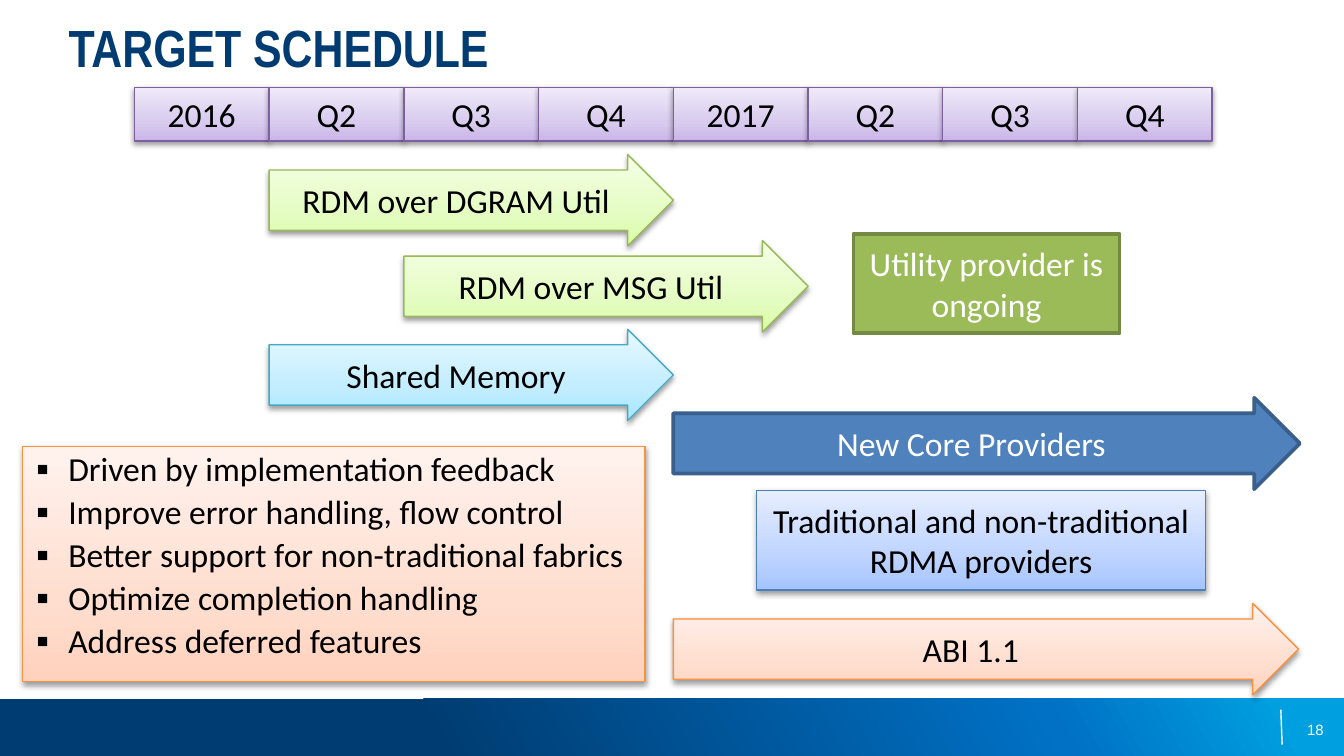
from lxml import etree
from pptx import Presentation
from pptx.dml.color import RGBColor
from pptx.enum.shapes import MSO_CONNECTOR, MSO_SHAPE
from pptx.enum.text import MSO_ANCHOR, PP_ALIGN
from pptx.oxml.ns import qn
from pptx.util import Inches, Pt

RECTANGLE = MSO_SHAPE.RECTANGLE
ARROW = MSO_SHAPE.RIGHT_ARROW
STRAIGHT = MSO_CONNECTOR.STRAIGHT
LEFT, CENTER, RIGHT = PP_ALIGN.LEFT, PP_ALIGN.CENTER, PP_ALIGN.RIGHT
TOP, MIDDLE = MSO_ANCHOR.TOP, MSO_ANCHOR.MIDDLE

WHITE = RGBColor(0xFF, 0xFF, 0xFF)
BLACK = RGBColor(0x00, 0x00, 0x00)
NAVY = RGBColor(0x00, 0x3C, 0x71)
BLUE = RGBColor(0x00, 0x71, 0xC5)
SKY = RGBColor(0x00, 0x9F, 0xDF)
CORE_FILL, CORE_LINE = RGBColor(0x4F, 0x81, 0xBD), RGBColor(0x3A, 0x5F, 0x8C)
UTILITY_FILL, UTILITY_LINE = RGBColor(0x9B, 0xBB, 0x59), RGBColor(0x73, 0x8A, 0x42)


def soft_colors(bottom, middle, top, line):
    stops = zip((0, 35, 100), map(RGBColor.from_string, (bottom, middle, top)))
    return list(stops), RGBColor.from_string(line)


PURPLE = soft_colors("C9B5E8", "D8CBEE", "F0EAF9", "7D60A0")
GREEN = soft_colors("DAFDA7", "E4FCC2", "F5FFE7", "98B955")
CYAN = soft_colors("A7E6FF", "C1EDFF", "E7F8FF", "46AAC5")
ORANGE = soft_colors("FFD2BD", "FFDED0", "FFF2ED", "F69240")
PALE_BLUE = soft_colors("A4C4FF", "BFD4FF", "E6EEFF", "4B7EBC")

WIDTH = 10
HEIGHT = WIDTH * 9 / 16
FOOTER_TOP = 5.2
GRID_LEFT, GRID_RIGHT = 1, 9.02
ARROW_HEIGHT = 0.68
QUARTERS = ["2016", "Q2", "Q3", "Q4", "2017", "Q2", "Q3", "Q4"]
QUARTER = (GRID_RIGHT - GRID_LEFT) / len(QUARTERS)
ARROWS = [
    ("RDM over DGRAM Util", 1, 3, 1.15, GREEN),
    ("RDM over MSG Util", 2, 3, 1.79, GREEN),
    ("Shared Memory", 1, 3, 2.45, CYAN),
    ("New Core Providers", 4, 4.65, 2.96, (CORE_FILL, CORE_LINE)),
    ("ABI 1.1", 4, 4.64, 4.49, ORANGE),
]
GOALS = [
    "Driven by implementation feedback",
    "Improve error handling, flow control",
    "Better support for non-traditional fabrics",
    "Optimize completion handling",
    "Address deferred features",
]


def column_left(column):
    return GRID_LEFT + column * QUARTER


def add_child(parent, tag, **attributes):
    child = etree.SubElement(parent, qn(tag))
    for name, value in attributes.items():
        child.set(name, str(value))
    return child


def fill_gradient(shape, stops, angle):
    shape.fill.gradient()
    gradient = shape._element.spPr.find(qn("a:gradFill"))
    for child in list(gradient):
        gradient.remove(child)
    stop_list = add_child(gradient, "a:gsLst")
    for position, color in stops:
        stop = add_child(stop_list, "a:gs", pos=position * 1000)
        add_child(stop, "a:srgbClr", val=color)
    add_child(gradient, "a:lin", ang=angle * 60000, scaled=0)


def add_shadow(shape):
    effects = shape._element.spPr.find(qn("a:effectLst"))
    shadow = add_child(effects, "a:outerShdw", blurRad=Pt(3.1), dist=Pt(1.6),
                       dir=90 * 60000, rotWithShape=0)
    color = add_child(shadow, "a:srgbClr", val=BLACK)
    add_child(color, "a:alpha", val=38000)


def format_font(paragraph, name, size, color):
    paragraph.font.name = name
    paragraph.font.size = Pt(size)
    paragraph.font.color.rgb = color


def clear_margins(frame):
    frame.margin_left = frame.margin_right = 0
    frame.margin_top = frame.margin_bottom = 0


def add_panel(slide, kind, box, colors):
    shape = slide.shapes.add_shape(kind, *map(Inches, box))
    shape.shadow.inherit = False
    fill, line = colors
    shape.line.color.rgb = line
    if isinstance(fill, list):
        fill_gradient(shape, fill, 270)
        shape.line.width = Pt(0.75)
        add_shadow(shape)
    else:
        shape.fill.solid()
        shape.fill.fore_color.rgb = fill
        shape.line.width = Pt(2)
    if kind == ARROW:
        shape.adjustments[0] = 0.66
        shape.adjustments[1] = 0.5
    return shape


def add_label(slide, kind, text, box, colors):
    shape = add_panel(slide, kind, box, colors)
    frame = shape.text_frame
    frame.word_wrap = True
    frame.vertical_anchor = MIDDLE
    paragraph = frame.paragraphs[0]
    paragraph.text = text
    paragraph.alignment = CENTER
    format_font(paragraph, "Calibri", 18, BLACK if isinstance(colors[0], list) else WHITE)


def add_goals(slide):
    frame = add_panel(slide, RECTANGLE, (0.17, 3.32, 4.63, 1.75), ORANGE).text_frame
    frame.word_wrap = True
    frame.vertical_anchor = TOP
    for index, goal in enumerate(GOALS):
        paragraph = frame.add_paragraph() if index else frame.paragraphs[0]
        paragraph.text = goal
        properties = paragraph._p.get_or_add_pPr()
        properties.set("marL", str(Inches(0.24)))
        properties.set("indent", str(-Inches(0.24)))
        add_child(properties, "a:buSzPct", val=110000)
        add_child(properties, "a:buFont", typeface="Arial")
        add_child(properties, "a:buChar", char="▪")
        paragraph.alignment = LEFT
        paragraph.line_spacing = 0.9
        paragraph.space_before = Pt(3.6 if index else 0)
        format_font(paragraph, "Calibri", 18, BLACK)


def add_title(slide):
    title = slide.shapes.title
    title.left, title.top, title.width, title.height = map(Inches, (0.51, 0.11, 9, 0.48))
    frame = title.text_frame
    clear_margins(frame)
    frame.vertical_anchor = TOP
    paragraph = frame.paragraphs[0]
    paragraph.text = "TARGET SCHEDULE"
    paragraph.alignment = LEFT
    format_font(paragraph, "Arial Narrow", 28, NAVY)
    paragraph.font.bold = True


def add_footer(slide):
    box = (0, FOOTER_TOP, WIDTH, HEIGHT - FOOTER_TOP)
    band = slide.shapes.add_shape(RECTANGLE, *map(Inches, box))
    band.shadow.inherit = False
    band.line.fill.background()
    fill_gradient(band, [(32, NAVY), (78, BLUE), (95, SKY)], 331)

    divider = slide.shapes.add_connector(STRAIGHT, *map(Inches, (9.53, 5.28, 9.54, 5.54)))
    divider.line.color.rgb = WHITE
    divider.line.width = Pt(0.75)
    add_child(divider._element.spPr, "a:effectLst")

    number = slide.shapes.add_textbox(*map(Inches, (7.52, 5.28, 2.33, 0.3)))
    frame = number.text_frame
    frame.word_wrap = True
    clear_margins(frame)
    frame.vertical_anchor = MIDDLE
    paragraph = frame.paragraphs[0]
    paragraph.text = "18"
    paragraph.alignment = RIGHT
    format_font(paragraph, "Arial", 8, WHITE)


def main():
    presentation = Presentation()
    presentation.slide_width = Inches(WIDTH)
    presentation.slide_height = Inches(HEIGHT)
    slide = presentation.slides.add_slide(presentation.slide_layouts[5])
    add_footer(slide)
    add_title(slide)
    add_goals(slide)
    for column, quarter in enumerate(QUARTERS):
        add_label(slide, RECTANGLE, quarter, (column_left(column), 0.65, QUARTER, 0.4), PURPLE)
    for text, column, span, top, colors in ARROWS:
        box = (column_left(column), top, span * QUARTER, ARROW_HEIGHT)
        add_label(slide, ARROW, text, box, colors)
    add_label(slide, RECTANGLE, "Utility provider is ongoing",
              (6.35, 1.74, 1.98, 0.74), (UTILITY_FILL, UTILITY_LINE))
    add_label(slide, RECTANGLE, "Traditional and non-traditional RDMA providers",
              (5.63, 3.65, 3.34, 0.74), PALE_BLUE)
    presentation.save("out.pptx")


if __name__ == "__main__":
    main()
